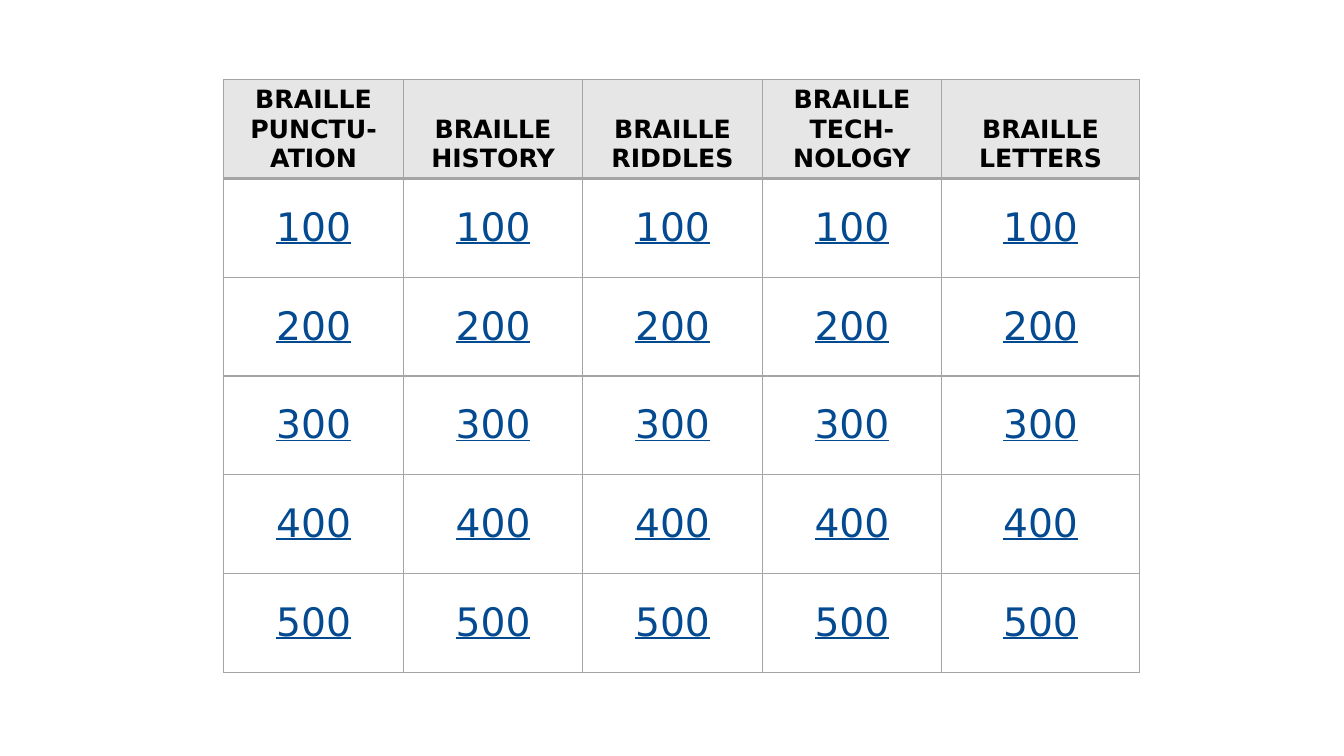
from dataclasses import dataclass

from lxml import etree
from pptx import Presentation
from pptx.dml.color import RGBColor
from pptx.enum.text import MSO_ANCHOR, PP_ALIGN
from pptx.oxml.ns import qn
from pptx.table import _Cell
from pptx.util import Inches, Pt

BOTTOM = MSO_ANCHOR.BOTTOM
MIDDLE = MSO_ANCHOR.MIDDLE
CENTER = PP_ALIGN.CENTER

SLIDE_WIDTH, SLIDE_HEIGHT = 13.33, 7.5
BOARD_LEFT, BOARD_TOP = 2.22, 0.79
COLUMN_WIDTHS = [1.78] * 4 + [1.96]
ROW_HEIGHT = 0.98
BORDER_COLOR = "A5A5A5"

CATEGORIES = [
    "BRAILLE PUNCTU- ATION",
    "BRAILLE HISTORY",
    "BRAILLE RIDDLES",
    "BRAILLE TECH-NOLOGY",
    "BRAILLE LETTERS",
]
POINTS = range(100, 600, 100)


@dataclass(frozen=True)
class CellStyle:
    anchor: MSO_ANCHOR
    fill: str
    color: str
    font: dict
    borders: dict


HEADER = CellStyle(
    BOTTOM, "E7E6E6", "000000",
    {"name": "DejaVu Sans", "size": Pt(18), "bold": True},
    {"L": 1, "R": 1, "T": 1, "B": 2},
)
VALUE = CellStyle(
    MIDDLE, "FFFFFF", "034A90",
    {"name": "DejaVu Sans", "size": Pt(28), "bold": False, "underline": True},
    {"L": 1, "R": 1, "T": 1, "B": 1},
)


def rgb(color: str) -> RGBColor:
    return RGBColor.from_string(color)


def draw_borders(cell: _Cell, borders: dict) -> None:
    properties = cell._tc.get_or_add_tcPr()
    for side, width in borders.items():
        line = etree.SubElement(properties, qn(f"a:ln{side}"), w=str(Pt(width)))
        fill = etree.SubElement(line, qn("a:solidFill"))
        etree.SubElement(fill, qn("a:srgbClr"), val=BORDER_COLOR)


def write_cell(cell: _Cell, text: str, style: CellStyle) -> None:
    draw_borders(cell, style.borders)
    cell.fill.solid()
    cell.fill.fore_color.rgb = rgb(style.fill)
    cell.vertical_anchor = style.anchor
    paragraph = cell.text_frame.paragraphs[0]
    paragraph.alignment = CENTER
    run = paragraph.add_run()
    run.text = text
    for name, value in style.font.items():
        setattr(run.font, name, value)
    run.font.color.rgb = rgb(style.color)


def main() -> None:
    presentation = Presentation()
    presentation.slide_width = Inches(SLIDE_WIDTH)
    presentation.slide_height = Inches(SLIDE_HEIGHT)
    slide = presentation.slides.add_slide(presentation.slide_layouts[6])

    rows = [(CATEGORIES, HEADER)]
    rows += [([str(points)] * len(CATEGORIES), VALUE) for points in POINTS]
    board = slide.shapes.add_table(
        len(rows), len(CATEGORIES),
        Inches(BOARD_LEFT), Inches(BOARD_TOP),
        Inches(sum(COLUMN_WIDTHS)), Inches(ROW_HEIGHT * len(rows)),
    ).table
    for column, width in zip(board.columns, COLUMN_WIDTHS):
        column.width = Inches(width)
    for row, (texts, style) in zip(board.rows, rows):
        row.height = Inches(ROW_HEIGHT)
        for cell, text in zip(row.cells, texts):
            write_cell(cell, text, style)

    presentation.save("out.pptx")


if __name__ == "__main__":
    main()
